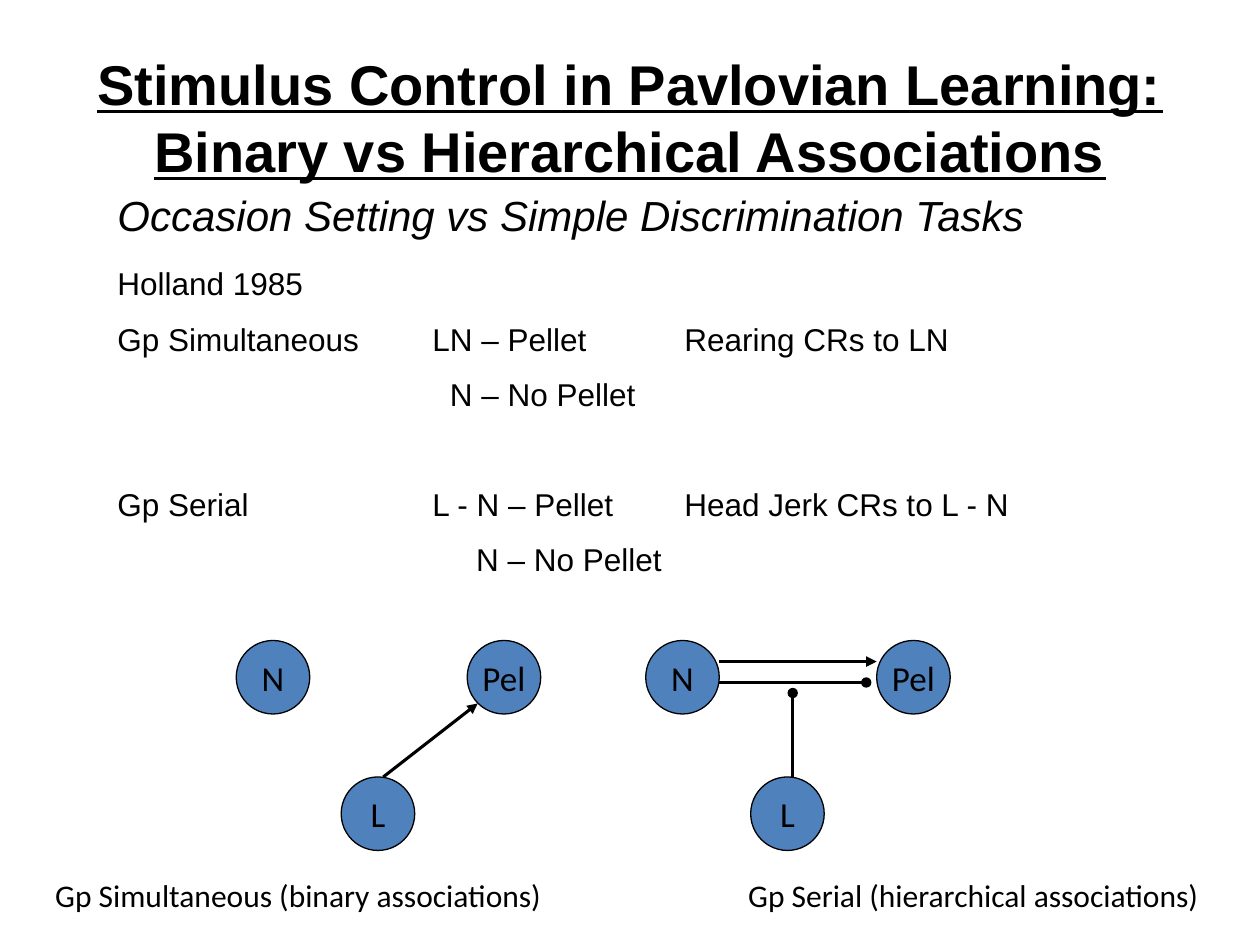
from dataclasses import dataclass

from lxml.etree import SubElement
from pptx import Presentation
from pptx.dml.color import RGBColor
from pptx.enum.shapes import MSO_CONNECTOR as Connector, MSO_SHAPE as Shape
from pptx.enum.text import MSO_ANCHOR as Anchor, MSO_AUTO_SIZE as AutoSize, PP_ALIGN as Align
from pptx.oxml.ns import qn
from pptx.slide import Slide
from pptx.util import Pt


@dataclass(frozen=True)
class Theme:
    ink: RGBColor = RGBColor(0x00, 0x00, 0x00)
    node_fill: RGBColor = RGBColor(0x4F, 0x81, 0xBD)
    heading_font: str = "Arial"
    diagram_font: str = "Calibri"
    title_size: float = 32
    subtitle_size: float = 24
    body_size: float = 18
    node_size: float = 20
    node_line: float = 0.75


THEME = Theme()


@dataclass(frozen=True)
class Box:
    left: float
    top: float
    width: float
    height: float


@dataclass(frozen=True)
class Style:
    font: str
    size: float
    bold: bool = False
    italic: bool = False
    underline: bool = False


@dataclass(frozen=True)
class Line:
    """One paragraph; tabs are stop positions in points."""
    text: str
    tabs: tuple[float, ...] = ()
    before: float = 0


@dataclass(frozen=True)
class Node:
    label: str
    x: float
    y: float


@dataclass(frozen=True)
class Link:
    """A line whose ends are measured from its diagram's corner."""
    start: tuple[float, float]
    end: tuple[float, float]
    head: str
    weight: float = 1.75


@dataclass(frozen=True)
class Diagram:
    left: float
    links: tuple[Link, ...]


TITLE = Style(THEME.heading_font, THEME.title_size, bold=True, underline=True)
SUBTITLE = Style(THEME.heading_font, THEME.subtitle_size, italic=True)
BODY = Style(THEME.heading_font, THEME.body_size)
CAPTION = Style(THEME.diagram_font, THEME.body_size)
NODE = Style(THEME.diagram_font, THEME.node_size)

COLUMNS = (180, 324)
GAP = 10
GROUP_GAP = 41
DESIGN = (
    Line("Holland 1985"),
    Line("Gp Simultaneous\tLN – Pellet\tRearing CRs to LN", COLUMNS, GAP),
    Line("\tN – No Pellet", (190,), GAP),
    Line("Gp Serial\tL - N – Pellet\tHead Jerk CRs to L - N", COLUMNS, GROUP_GAP),
    Line("\tN – No Pellet", (205,), GAP),
)
CAPTIONS = Line(
    "Gp Simultaneous (binary associations)\tGp Serial (hierarchical associations)", (396,))

DIAGRAM_TOP = 366
NODE_DIAMETER = 42
NODES = (Node("N", 0, 0), Node("Pel", 132, 0), Node("L", 60, 78))
DIAGRAMS = (
    Diagram(135, (Link((84, 78), (138, 36), "triangle"),)),
    Diagram(369, (
        Link((84, 78), (84, 30), "oval"),
        Link((42, 24), (126, 24), "oval"),
        Link((42, 12), (132, 12), "triangle", 2),
    )),
)


def write_line(paragraph, line: Line, style: Style, align: Align) -> None:
    paragraph.alignment = align
    paragraph.space_before = Pt(line.before)
    if line.tabs:
        stops = SubElement(paragraph._p.get_or_add_pPr(), qn("a:tabLst"))
        for position in line.tabs:
            SubElement(stops, qn("a:tab"), pos=str(Pt(position)), algn="l")
    run = paragraph.add_run()
    run.text = line.text
    font = run.font
    font.name, font.size = style.font, Pt(style.size)
    font.bold, font.italic, font.underline = style.bold, style.italic, style.underline
    font.color.rgb = THEME.ink


def add_text(slide: Slide, box: Box, lines: tuple[Line, ...], style: Style,
             align: Align = Align.LEFT, anchor: Anchor = Anchor.TOP,
             wrap: bool = True, grow: bool = True) -> None:
    frame = slide.shapes.add_textbox(
        Pt(box.left), Pt(box.top), Pt(box.width), Pt(box.height)).text_frame
    frame.word_wrap = wrap
    frame.auto_size = AutoSize.SHAPE_TO_FIT_TEXT if grow else AutoSize.NONE
    frame.vertical_anchor = anchor
    for index, line in enumerate(lines):
        paragraph = frame.add_paragraph() if index else frame.paragraphs[0]
        write_line(paragraph, line, style, align)


def add_node(slide: Slide, node: Node, left: float) -> None:
    circle = slide.shapes.add_shape(
        Shape.OVAL, Pt(left + node.x), Pt(DIAGRAM_TOP + node.y),
        Pt(NODE_DIAMETER), Pt(NODE_DIAMETER))
    circle.shadow.inherit = False
    circle.fill.solid()
    circle.fill.fore_color.rgb = THEME.node_fill
    circle.line.color.rgb = THEME.ink
    circle.line.width = Pt(THEME.node_line)
    frame = circle.text_frame
    frame.word_wrap = False
    frame.vertical_anchor = Anchor.MIDDLE
    write_line(frame.paragraphs[0], Line(node.label), NODE, Align.CENTER)


def add_link(slide: Slide, link: Link, left: float) -> None:
    (x1, y1), (x2, y2) = link.start, link.end
    connector = slide.shapes.add_connector(
        Connector.STRAIGHT, Pt(left + x1), Pt(DIAGRAM_TOP + y1),
        Pt(left + x2), Pt(DIAGRAM_TOP + y2))
    connector.line.color.rgb = THEME.ink
    connector.line.width = Pt(link.weight)
    SubElement(connector.line._get_or_add_ln(), qn("a:tailEnd"), type=link.head)
    SubElement(connector._element.spPr, qn("a:effectLst"))


def main() -> None:
    deck = Presentation()
    deck.slide_width, deck.slide_height = Pt(720), Pt(540)
    slide = deck.slides.add_slide(deck.slide_layouts[6])

    title = Line("Stimulus Control in Pavlovian Learning: Binary vs Hierarchical Associations")
    add_text(slide, Box(36, 21.6, 648, 90), (title,), TITLE,
             align=Align.CENTER, anchor=Anchor.MIDDLE, grow=False)
    subtitle = Line("Occasion Setting vs Simple Discrimination Tasks")
    add_text(slide, Box(60, 105, 538.5, 36), (subtitle,), SUBTITLE, wrap=False)
    add_text(slide, Box(60, 147.6, 636, 191.5), DESIGN, BODY)

    for diagram in DIAGRAMS:
        for node in NODES:
            add_node(slide, node, diagram.left)
        for link in diagram.links:
            add_link(slide, link, diagram.left)
    add_text(slide, Box(24.5, 497, 689, 29), (CAPTIONS,), CAPTION)

    deck.save("out.pptx")


if __name__ == "__main__":
    main()
